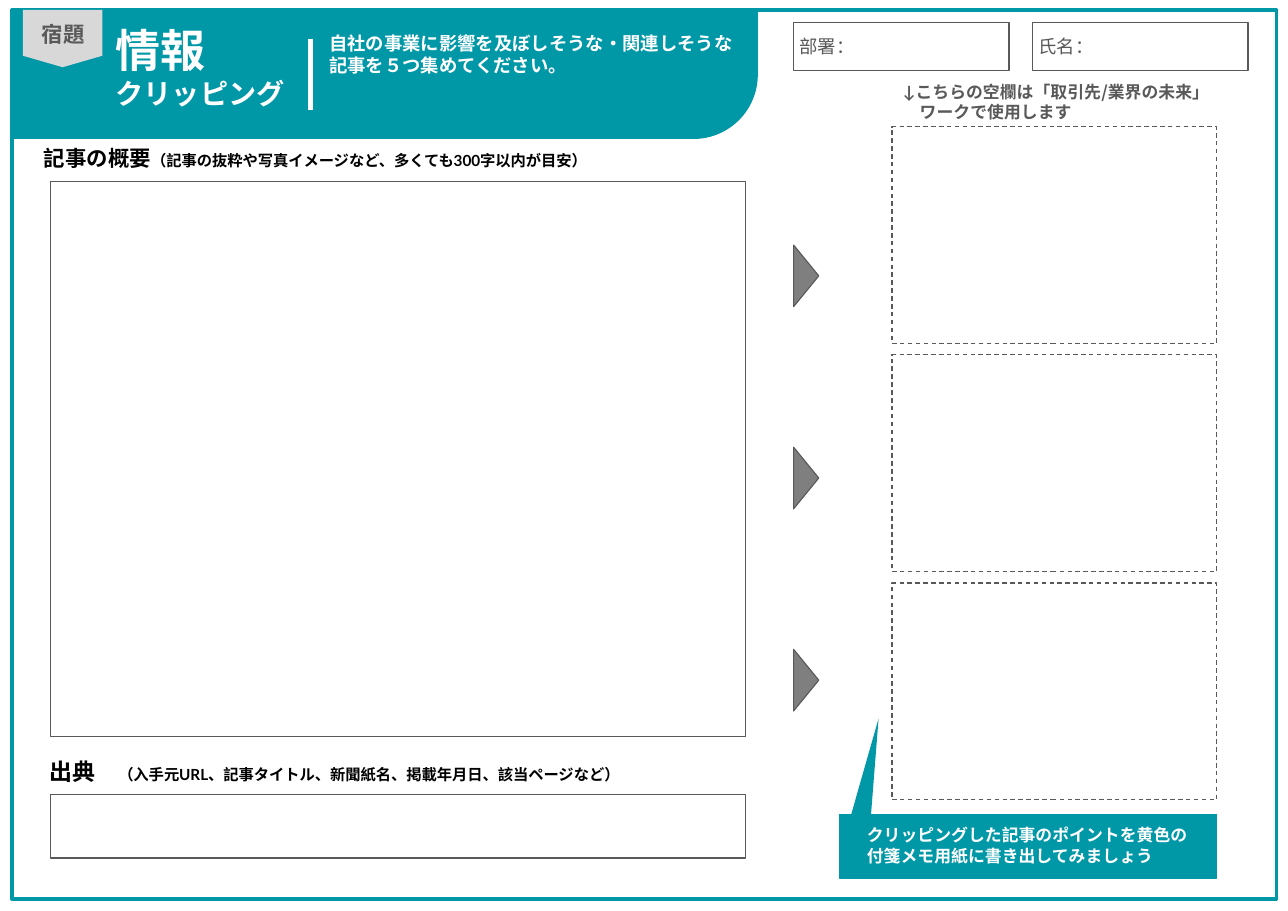
from lxml.etree import SubElement
from pptx import Presentation
from pptx.dml.color import RGBColor
from pptx.enum.dml import MSO_LINE
from pptx.enum.shapes import MSO_CONNECTOR, MSO_SHAPE as Preset
from pptx.enum.text import MSO_ANCHOR as Anchor, MSO_AUTO_SIZE, PP_ALIGN as Align
from pptx.oxml.ns import qn
from pptx.util import Cm, Pt

TEAL = RGBColor(0x00, 0x97, 0xA7)
WHITE = RGBColor(0xFF, 0xFF, 0xFF)
BLACK = RGBColor(0x00, 0x00, 0x00)
DARK_GRAY = RGBColor(0x59, 0x59, 0x59)
MID_GRAY = RGBColor(0x7F, 0x7F, 0x7F)
LIGHT_GRAY = RGBColor(0xD8, 0xD8, 0xD8)

LATO, ARIAL, NOTO = "Lato", "Arial", "Noto Sans CJK JP"
EAST_ASIAN = {LATO: LATO, ARIAL: ARIAL, NOTO: LATO}

BADGE = [[("宿題", 14)]]
TITLE = [[("情報", 29.4)], [("クリッピング", 18.4)]]
INSTRUCTION = [[("自社の事業に影響を及ぼしそうな・関連しそうな記事を５つ集めてください。", 12)]]
SUMMARY = [[("記事の概要", 14), ("（記事の抜粋や写真イメージなど、多くても300字以内が目安）", 10)]]
SOURCE = [[("出典　", 15), ("（入手元URL、記事タイトル、新聞紙名、掲載年月日、該当ページなど）", 10)]]
FIELDS = ["部署：", "氏名："]
NOTE = [[("↓こちらの空欄は「取引先/業界の未来」", 11)], [("　ワークで使用します", 11)]]
CALLOUT = [[("　クリッピングした記事のポイントを黄色の", 11)],
           [("　付箋メモ用紙に書き出してみましょう", 11)]]

ANSWER_BOXES = [(1.17, 4.19, 16.03, 12.78), (1.17, 18.31, 16.03, 1.47)]
ARROW_TOP, ARROW_STEP = 6.07, 4.66
FIELD_LEFT, FIELD_STEP = 18.29, 5.51
MEMO_TOP, MEMO_STEP = 2.92, 5.26
MEMO_COUNT = 3


def add_block(preset, box, fill=None, line=None, width=0.75, rotation=0):
    shape = slide.shapes.add_shape(preset, *map(Cm, box))
    shape.shadow.inherit = False
    shape.rotation = rotation
    if fill is None:
        shape.fill.background()
    else:
        shape.fill.solid()
        shape.fill.fore_color.rgb = fill
    if line is None:
        shape.line.fill.background()
    else:
        shape.line.color.rgb = line
        shape.line.width = Pt(width)
    return shape


def write(shape, lines, font, color, bold=True, align=Align.LEFT, anchor=Anchor.TOP, inset=0.25):
    frame = shape.text_frame
    frame.word_wrap = True
    frame.auto_size = MSO_AUTO_SIZE.NONE
    frame.vertical_anchor = anchor
    frame.margin_left = frame.margin_right = Cm(inset)
    frame.margin_top = frame.margin_bottom = Cm(inset)
    for index, runs in enumerate(lines):
        paragraph = frame.add_paragraph() if index else frame.paragraphs[0]
        paragraph.alignment = align
        paragraph.line_spacing = 1.0
        paragraph.space_before = Pt(0)
        paragraph.font.name = font
        paragraph.font.bold = bold
        paragraph.font.color.rgb = color
        for properties in paragraph._p.iter(qn("a:defRPr")):
            SubElement(properties, qn("a:ea"), typeface=EAST_ASIAN[font])
        for text, size in runs:
            run = paragraph.add_run()
            run.text = text
            run.font.size = Pt(size)


def add_text(box, lines, font, color, **options):
    write(slide.shapes.add_textbox(*map(Cm, box)), lines, font, color, **options)


presentation = Presentation()
presentation.slide_width, presentation.slide_height = Cm(29.7), Cm(21)
slide = presentation.slides.add_slide(presentation.slide_layouts[5])

add_block(Preset.RECTANGLE, (0.28, 0.23, 29.16, 20.5), line=TEAL, width=2.25)
header = add_block(Preset.ROUND_1_RECTANGLE, (7.39, -6.88, 2.97, 17.2), TEAL, rotation=90)
header.adjustments[0] = 0.5
divider = slide.shapes.add_connector(MSO_CONNECTOR.STRAIGHT, Cm(7.16), Cm(0.89), Cm(7.16), Cm(2.54))
divider.line.color.rgb = WHITE
divider.line.width = Pt(3)
SubElement(divider._element.spPr, qn("a:effectLst"))
add_block(Preset.FLOWCHART_OFFPAGE_CONNECTOR, (0.53, 0.23, 1.83, 1.32), LIGHT_GRAY)
add_text((0.43, 0.23, 2.06, 1.12), BADGE, ARIAL, DARK_GRAY, align=Align.CENTER)
add_text((7.26, 0.41, 10.1, 2.46), INSTRUCTION, LATO, WHITE, inset=0.33)

title = slide.shapes.title
title.left, title.top, title.width, title.height = map(Cm, (2.34, 0.18, 4.98, 1.32))
write(title, TITLE, NOTO, WHITE, inset=0.33)
slide.shapes._spTree.append(title._element)

add_text((0.89, 17.22, 17.4, 1.12), SOURCE, LATO, BLACK)
add_text((0.76, 3.1, 16.43, 0.84), SUMMARY, LATO, BLACK)
for box in ANSWER_BOXES:
    add_block(Preset.RECTANGLE, box, line=DARK_GRAY)

for index, label in enumerate(FIELDS):
    left = FIELD_LEFT + index * FIELD_STEP
    add_block(Preset.RECTANGLE, (left, 0.51, 4.98, 1.12), WHITE, DARK_GRAY)
    add_text((left - 0.1, 0.51, 1.96, 1.12), [[(label, 12)]], ARIAL, DARK_GRAY,
             bold=False, anchor=Anchor.MIDDLE)

for index in range(MEMO_COUNT):
    add_block(Preset.ISOSCELES_TRIANGLE, (17.88, ARROW_TOP + index * ARROW_STEP, 1.42, 0.58),
              MID_GRAY, DARK_GRAY, rotation=90)
    memo = add_block(Preset.RECTANGLE, (20.57, MEMO_TOP + index * MEMO_STEP, 7.49, 5), line=DARK_GRAY)
    memo.line.dash_style = MSO_LINE.DASH

add_text((20.57, 1.63, 8.56, 1.47), NOTE, NOTO, DARK_GRAY)
pointer = add_block(Preset.RIGHT_TRIANGLE, (19.63, 16.54, 0.53, 2.62), TEAL, rotation=4.5)
pointer._element.spPr.find(qn("a:xfrm")).set("flipH", "1")
callout = add_block(Preset.RECTANGLE, (19.35, 18.77, 8.71, 1.47), TEAL, TEAL)
write(callout, CALLOUT, NOTO, WHITE)

presentation.save("out.pptx")
